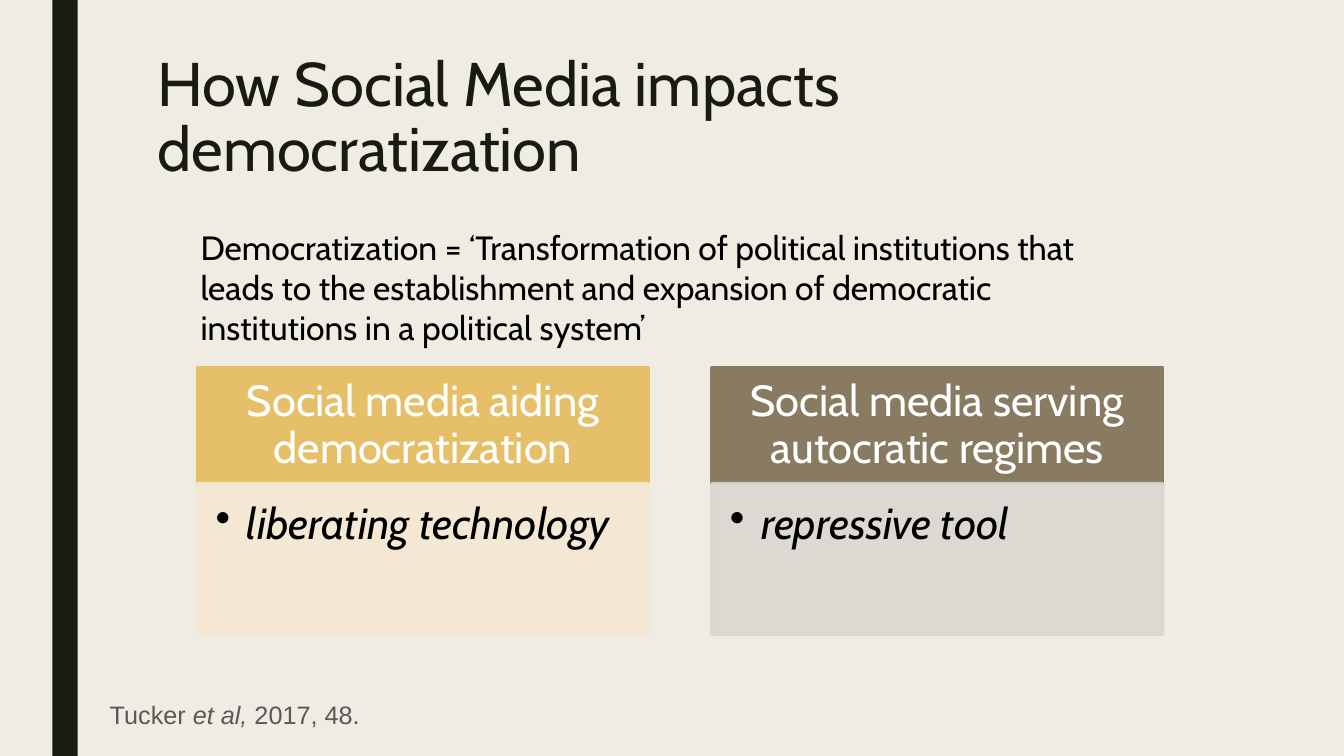
import pptx
import pptx.dml.color
import pptx.enum.shapes
import pptx.enum.text
import pptx.oxml
import pptx.oxml.ns
import pptx.util
from pptx.util import Inches

COLORS = {
    "paper": "EFEDE3",
    "ink": "191B0E",
    "gold": "E6C069",
    "cream": "F5E8D4",
    "brown": "897B61",
    "stone": "DAD7D2",
    "white": "FFFFFF",
    "black": "000000",
    "gray": "595959",
}
ANCHOR = pptx.enum.text.MSO_ANCHOR
ALIGN = pptx.enum.text.PP_ALIGN
FIT = pptx.enum.text.MSO_AUTO_SIZE


def color(name):
    return pptx.dml.color.RGBColor.from_string(COLORS[name])


def style(run, size, tint, face="Cabin", italic=False):
    run.font.name = face
    run.font.size = pptx.util.Pt(size)
    run.font.color.rgb = color(tint)
    run.font.italic = italic


def write(frame, text, size, tint, italic=False):
    frame.text = text
    line = frame.paragraphs[0]
    style(line.runs[0], size, tint, italic=italic)
    return line


def pad(frame, left, top, right, bottom):
    frame.margin_left, frame.margin_top = Inches(left), Inches(top)
    frame.margin_right, frame.margin_bottom = Inches(right), Inches(bottom)


def block(slide, box, tint):
    kind = pptx.enum.shapes.MSO_SHAPE.RECTANGLE
    shape = slide.shapes.add_shape(kind, *map(Inches, box))
    shape.shadow.inherit = False
    shape.fill.solid()
    shape.fill.fore_color.rgb = color(tint)
    shape.line.color.rgb = color(tint)
    shape.line.width = pptx.util.Pt(2.75)
    shape.text_frame.word_wrap = True
    return shape


def fade(shape, percent):
    for node in shape._element.spPr.iter(pptx.oxml.ns.qn("a:srgbClr")):
        alpha = pptx.oxml.parse_xml(
            f'<a:alpha {pptx.oxml.ns.nsdecls("a")} val="{percent * 1000}"/>')
        node.append(alpha)


def bullet(line):
    props = line._p.get_or_add_pPr()
    props.set("marL", str(Inches(0.31)))
    props.set("indent", str(Inches(-0.31)))
    props.append(pptx.oxml.parse_xml(
        f'<a:buChar {pptx.oxml.ns.nsdecls("a")} char="•"/>'))


def header(slide, left, text, tint):
    frame = block(slide, (left, 3.65, 4.47, 1.15), tint).text_frame
    pad(frame, 0.24, 0.14, 0.24, 0.14)
    frame.vertical_anchor = ANCHOR.MIDDLE
    line = write(frame, text, 31, "white")
    line.alignment = ALIGN.CENTER
    line.line_spacing = 0.9


def panel(slide, left, text, tint):
    shape = block(slide, (left, 4.8, 4.47, 1.49), tint)
    fade(shape, 90)
    frame = shape.text_frame
    pad(frame, 0.18, 0.18, 0.24, 0.27)
    frame.vertical_anchor = ANCHOR.TOP
    line = write(frame, text, 31, "black", italic=True)
    line.alignment = ALIGN.LEFT
    line.line_spacing = 0.9
    bullet(line)


def title(slide, text):
    shape = slide.shapes.title
    shape.left, shape.top = Inches(1.46), Inches(0.48)
    shape.width, shape.height = Inches(10.5), Inches(1.62)
    frame = shape.text_frame
    frame.word_wrap = True
    frame.auto_size = FIT.NONE
    frame.vertical_anchor = ANCHOR.TOP
    line = write(frame, text, 44, "ink")
    line.alignment = ALIGN.LEFT
    line.line_spacing = 0.89


def quote(slide, text):
    box = slide.shapes.add_textbox(*map(Inches, (1.89, 2.2, 9.65, 1.31)))
    box.text_frame.word_wrap = True
    write(box.text_frame, text, 24, "black")


def cite(slide, parts):
    box = slide.shapes.add_textbox(*map(Inches, (0.99, 6.89, 2.7, 0.4)))
    box.text_frame.word_wrap = False
    line = box.text_frame.paragraphs[0]
    for text, italic in parts:
        run = line.add_run()
        run.text = text
        style(run, 18, "gray", "Arial", italic)


def main():
    deck = pptx.Presentation()
    deck.slide_width, deck.slide_height = Inches(13.33), Inches(7.5)
    slide = deck.slides.add_slide(deck.slide_layouts[5])
    slide.background.fill.solid()
    slide.background.fill.fore_color.rgb = color("paper")

    stripe = block(slide, (0.52, 0, 0.25, 7.5), "ink")
    stripe.line.fill.background()
    title(slide, "How Social Media impacts democratization")

    cards = [
        ("Social media aiding democratization", "gold",
         "liberating technology", "cream"),
        ("Social media serving autocratic regimes", "brown",
         "repressive tool", "stone"),
    ]
    for i, (head, dark, point, light) in enumerate(cards):
        left = 1.96 + 5.1 * i
        header(slide, left, head, dark)
        panel(slide, left, point, light)

    quote(slide, "Democratization = ‘Transformation of political institutions "
                 "that leads to the establishment and expansion of democratic "
                 "institutions in a political system’")
    cite(slide, [("Tucker ", False), ("et al, ", True), ("2017, 48.", False)])
    deck.save("out.pptx")


if __name__ == "__main__":
    main()
